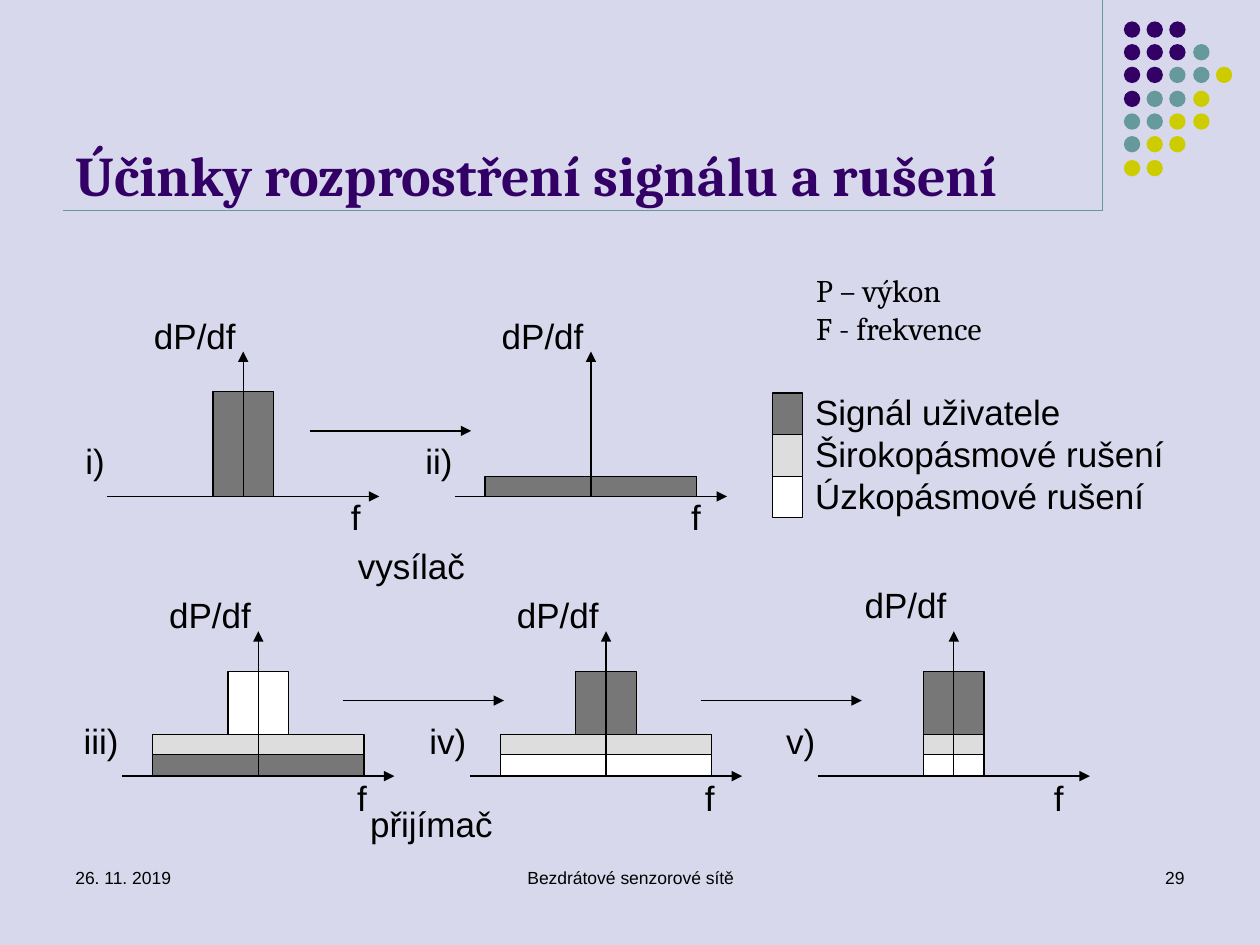
from lxml import etree
from pptx import Presentation
from pptx.dml.color import RGBColor
from pptx.enum.shapes import MSO_CONNECTOR, MSO_SHAPE
from pptx.enum.text import MSO_ANCHOR, MSO_AUTO_SIZE, PP_ALIGN
from pptx.oxml.ns import qn
from pptx.util import Pt

PX = 9144  # EMU; 100 px to the inch
STRAIGHT = MSO_CONNECTOR.STRAIGHT
RECTANGLE, OVAL = MSO_SHAPE.RECTANGLE, MSO_SHAPE.OVAL
LEFT, CENTER, RIGHT = PP_ALIGN.LEFT, PP_ALIGN.CENTER, PP_ALIGN.RIGHT

BACKGROUND = RGBColor(0xD8, 0xD8, 0xEC)
PURPLE = RGBColor(0x33, 0x00, 0x66)
TEAL = RGBColor(0x66, 0x99, 0x99)
YELLOW = RGBColor(0xCC, 0xCC, 0x00)
BLACK = RGBColor(0x00, 0x00, 0x00)
USER_SIGNAL = RGBColor(0x77, 0x77, 0x77)
WIDEBAND = RGBColor(0xDD, 0xDD, 0xDD)
NARROWBAND = RGBColor(0xFF, 0xFF, 0xFF)

DOT_COLOURS = {"P": PURPLE, "T": TEAL, "Y": YELLOW}
DOT_ROWS = ["PPP", "PPPT", "PPTTY", "PTTY", "TTYY", "TYY", "YY"]
DOT_PITCH = 18.25

WIDE, NARROW = 168, 48
# label, label left, origin x, base y, dP/df top, bars from the bottom up
PLOTS = [
    ("i)", 57, 36, 193, 394, 245, [(USER_SIGNAL, NARROW, 83)]),
    ("ii)", 327, 42, 469, 394, 245, [(USER_SIGNAL, WIDE, 16)]),
    ("iii)", 56, 48, 205, 616, 466,
     [(USER_SIGNAL, WIDE, 17), (WIDEBAND, WIDE, 16), (NARROWBAND, NARROW, 50)]),
    ("iv)", 331, 49, 481, 616, 466,
     [(NARROWBAND, WIDE, 17), (WIDEBAND, WIDE, 16), (USER_SIGNAL, NARROW, 50)]),
    ("v)", 614, 43, 757, 616, 458,
     [(NARROWBAND, NARROW, 17), (WIDEBAND, NARROW, 16), (USER_SIGNAL, NARROW, 50)]),
]
LEGEND = [("Signál uživatele", USER_SIGNAL),
          ("Širokopásmové rušení", WIDEBAND),
          ("Úzkopásmové rušení", NARROWBAND)]


class SlideBuilder:
    def __init__(self, slide, font="Arial", size=20, line_width=0.75):
        self.slide = slide
        self.font = font
        self.size = size
        self.line_width = Pt(line_width)

    def place(self, shape, left, top, width, height):
        shape.left, shape.top = left * PX, top * PX
        shape.width, shape.height = width * PX, height * PX

    def run(self, paragraph, text, font, size, colour=BLACK, bold=False):
        run = paragraph.add_run()
        run.text = text
        run.font.name = font
        run.font.size = Pt(size)
        run.font.bold = bold
        run.font.color.rgb = colour

    def title(self, text, left, top, width, height):
        title = self.slide.shapes.title
        self.place(title, left, top, width, height)
        frame = title.text_frame
        frame.auto_size = MSO_AUTO_SIZE.NONE
        frame.vertical_anchor = MSO_ANCHOR.BOTTOM
        frame.paragraphs[0].alignment = LEFT
        self.run(frame.paragraphs[0], text, "Cambria", 32, PURPLE, bold=True)

    def text(self, lines, left, top, width, height, alignment=RIGHT,
             font=None, size=None, wrap=False, spacing=None):
        box = self.slide.shapes.add_textbox(0, 0, 0, 0)
        self.place(box, left, top, width, height)
        frame = box.text_frame
        frame.word_wrap = wrap
        for index, line in enumerate(lines):
            paragraph = frame.add_paragraph() if index else frame.paragraphs[0]
            paragraph.alignment = alignment
            if spacing:
                paragraph.line_spacing = Pt(spacing)
            self.run(paragraph, line, font or self.font, size or self.size)

    def label(self, text, left, top, width, height=43):
        self.text([text], left, top, width, height, spacing=24)

    def shape(self, kind, colour, left, top, width, height, outlined=True):
        shape = self.slide.shapes.add_shape(kind, 0, 0, 0, 0)
        self.place(shape, left, top, width, height)
        shape.shadow.inherit = False
        shape.fill.solid()
        shape.fill.fore_color.rgb = colour
        if outlined:
            shape.line.color.rgb = BLACK
            shape.line.width = self.line_width
        else:
            shape.line.fill.background()

    def line(self, x1, y1, x2, y2, colour=BLACK, arrow=True):
        connector = self.slide.shapes.add_connector(
            STRAIGHT, x1 * PX, y1 * PX, x2 * PX, y2 * PX)
        connector.line.color.rgb = colour
        connector.line.width = self.line_width
        if arrow:
            outline = connector.line._get_or_add_ln()
            etree.SubElement(outline, qn("a:tailEnd"), type="triangle")
        etree.SubElement(connector._element.spPr, qn("a:effectLst"))

    def plot(self, name, name_left, name_width, origin, base, title_top, bars):
        """Draw one spectrum: stacked bars behind a pair of labelled axes."""
        top = base
        for colour, width, height in bars:
            top -= height
            self.shape(RECTANGLE, colour, origin - width // 2, top, width, height)
        self.line(origin - 108, base, origin + 108, base)
        self.line(origin, base, origin, base - 115)
        self.label("dP/df", origin - 81, title_top, 85)
        self.label(name, name_left, base - 50, name_width)


def main():
    presentation = Presentation()
    presentation.slide_width, presentation.slide_height = 1000 * PX, 750 * PX
    slide = presentation.slides.add_slide(presentation.slide_layouts[5])
    slide.background.fill.solid()
    slide.background.fill.fore_color.rgb = BACKGROUND
    builder = SlideBuilder(slide)

    builder.line(875, 0, 875, 167, TEAL, arrow=False)
    builder.line(50, 167, 875, 167, TEAL, arrow=False)
    for row, codes in enumerate(DOT_ROWS):
        for column, code in enumerate(codes):
            builder.shape(OVAL, DOT_COLOURS[code], 892 + round(column * DOT_PITCH),
                          17 + round(row * DOT_PITCH), 13, 13, outlined=False)
    builder.title("Účinky rozprostření signálu a rušení", 50, 13, 825, 157)

    for plot in PLOTS:
        builder.plot(*plot)
    for left, top in [(268, 388), (538, 388), (273, 611), (549, 611), (826, 611)]:
        builder.label("f", left, top, 28)
    builder.label("vysílač", 273, 427, 106, 44)
    builder.label("přijímač", 283, 632, 118, 44)
    for left, top in [(246, 342), (272, 556), (556, 556)]:
        builder.line(left, top, left + 128, top)

    for index, (name, colour) in enumerate(LEGEND):
        builder.shape(RECTANGLE, colour, 613, 312 + 33 * index, 24, 33)
    builder.text([name for name, colour in LEGEND], 637, 305, 299, 111, LEFT, spacing=24)
    builder.text(["P – výkon", "F - frekvence"], 638, 210, 164, 71, LEFT,
                 font="Cambria", size=18)

    for text, left, width, alignment in [
            ("26. 11. 2019", 50, 233, LEFT),
            ("Bezdrátové senzorové sítě", 342, 317, CENTER),
            ("29", 717, 233, RIGHT)]:
        builder.text([text], left, 683, width, 50, alignment, size=10, wrap=True)

    presentation.save("out.pptx")


if __name__ == "__main__":
    main()
